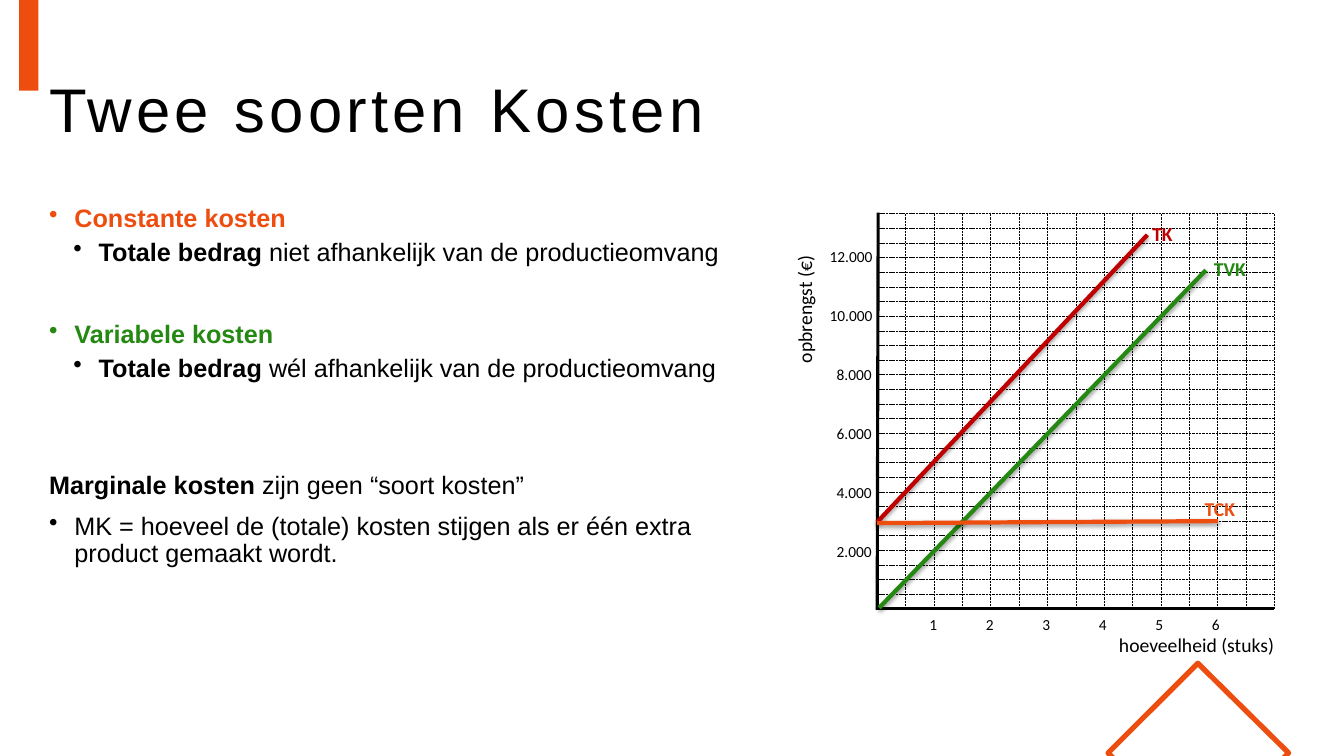
import pptx
import pptx.util
import pptx.dml.color
import pptx.enum.dml
import pptx.enum.shapes
import pptx.enum.text
import pptx.oxml
import pptx.oxml.ns

PX = 9144  # 100 px to the inch
BLACK, ORANGE, GREEN, RED = "000000", "ED4D0F", "258812", "C00000"

TITLE = "Twee soorten Kosten"
# runs (text, bold, colour), left indent, bullet, space before in points
BODY = [
    ([("Constante kosten", True, ORANGE)], 25, True, 10),
    ([("Totale bedrag", True, BLACK),
      (" niet afhankelijk van de productieomvang", False, BLACK)], 49, True, 5),
    ([("Variabele kosten", True, GREEN)], 25, True, 39),
    ([("Totale bedrag ", True, BLACK),
      ("wél afhankelijk van de productieomvang", False, BLACK)], 49, True, 5),
    ([("Marginale kosten ", True, BLACK),
      ("zijn geen “soort kosten”", False, BLACK)], 0, False, 64),
    ([("MK = hoeveel de (totale) kosten stijgen als er één extra product "
       "gemaakt wordt.", False, BLACK)], 25, True, 10),
]
COSTS = [  # name, label box, line from, line to, colour
    ("TK", (1133, 215, 41, 34), (1138, 233), (870, 518), RED),
    ("TVK", (1194, 250, 52, 34), (1196, 268), (872, 603), GREEN),
    ("TCK", (1185, 488, 50, 34), (1208, 517), (870, 519), ORANGE),
]
AXES = [((870, 604), (1264, 604)), ((871, 211), (870, 605))]
AMOUNTS = ["2.000", "4.000", "6.000", "8.000", "10.000", "12.000"]
COUNTS = ["1", "2", "3", "4", "5", "6"]
LEFT, RIGHT, TOP, BASE = 870, 1264, 212, 604
ROWS, COLS = 27, 14
DIAMOND = [(1269, 756), (1108, 756), (1099, 747), (1188, 658), (1278, 747)]

SHADOW = ('<a:outerShdw blurRad="39370" dist="20320" dir="5400000" rotWithShape="0">'
          '<a:srgbClr val="000000"><a:alpha val="38000"/></a:srgbClr></a:outerShdw>')


def emu(*vals):
    return [round(v * PX) for v in vals]


def hue(code):
    return pptx.dml.color.RGBColor.from_string(code)


def style(obj, **vals):
    for key, val in vals.items():
        setattr(obj, key, val)


def write(par, text, size, face, code, bold=False):
    run = par.add_run()
    run.text = text
    style(run.font, size=pptx.util.Pt(size), name=face, bold=bold)
    run.font.color.rgb = hue(code)
    return run


def label(text, box, size=11, code=BLACK, bold=False, turn=0):
    shape = slide.shapes.add_textbox(*emu(*box))
    shape.rotation = turn
    style(shape.text_frame, word_wrap=False,
          auto_size=pptx.enum.text.MSO_AUTO_SIZE.SHAPE_TO_FIT_TEXT)
    write(shape.text_frame.paragraphs[0], text, size, "Calibri", code, bold)


def rule(start, end, code=BLACK, width=0.25, dash=None, effect=""):
    line = slide.shapes.add_connector(
        pptx.enum.shapes.MSO_CONNECTOR.STRAIGHT, *emu(*start, *end))
    line.line.color.rgb = hue(code)
    style(line.line, width=pptx.util.Pt(width), dash_style=dash)
    xml = f'<a:effectLst {pptx.oxml.ns.nsdecls("a")}>{effect}</a:effectLst>'
    line._element.spPr.append(pptx.oxml.parse_xml(xml))


def indent(par, left):
    """Hang a bullet 25 px before the text."""
    props = par._p.get_or_add_pPr()
    props.set("marL", str(left * PX))
    props.set("indent", str(-25 * PX))
    xml = f'<a:buChar {pptx.oxml.ns.nsdecls("a")} char="•"/>'
    props.append(pptx.oxml.parse_xml(xml))


deck = pptx.Presentation()
style(deck, slide_width=1333 * PX, slide_height=750 * PX)
slide = deck.slides.add_slide(deck.slide_layouts[5])

# Decoration
bar = slide.shapes.add_shape(
    pptx.enum.shapes.MSO_SHAPE.RECTANGLE, *emu(19, -25, 19, 115))
bar.shadow.inherit = False
bar.fill.solid()
bar.fill.fore_color.rgb = hue(ORANGE)
bar.line.fill.background()

pen = slide.shapes.build_freeform(*DIAMOND[0], scale=PX)
pen.add_line_segments(DIAMOND[1:], close=True)
diamond = pen.convert_to_shape()
diamond.shadow.inherit = False
diamond.fill.background()
diamond.line.color.rgb = hue(ORANGE)
diamond.line.width = pptx.util.Pt(3.75)

# Title and body
title = slide.shapes.title
style(title, **dict(zip(("left", "top", "width", "height"), emu(39, 39, 1261, 145))))
style(title.text_frame, word_wrap=True,
      vertical_anchor=pptx.enum.text.MSO_ANCHOR.MIDDLE)
head = title.text_frame.paragraphs[0]
style(head, alignment=pptx.enum.text.PP_ALIGN.LEFT, line_spacing=0.9)
write(head, TITLE, 44, "Arial", BLACK).font._element.set("spc", "300")

body = slide.shapes.add_textbox(*emu(39, 199, 693, 512)).text_frame
body.word_wrap = True
for i, (runs, left, bullet, gap) in enumerate(BODY):
    par = body.add_paragraph() if i else body.paragraphs[0]
    style(par, line_spacing=0.9, space_before=pptx.util.Pt(gap))
    if bullet:
        indent(par, left)
    for text, bold, code in runs:
        write(par, text, 18, "Arial", code, bold)

# Grid
DASH = pptx.enum.dml.MSO_LINE.SQUARE_DOT
for i in range(ROWS + 1):
    y = TOP + i * (BASE - TOP) / ROWS
    rule((LEFT, y), (RIGHT, y), dash=DASH)
for i in range(1, COLS + 1):
    x = LEFT + i * (RIGHT - LEFT) / COLS
    rule((x, TOP), (x, BASE), dash=DASH)

# Axis labels
for i, text in enumerate(AMOUNTS):
    wide = 63 if len(text) > 5 else 56
    label(text, (876 - wide, 533 - 58.6 * i, wide, 29))
for i, text in enumerate(COUNTS):
    label(text, (912 + 56 * i, 605, 28, 29))
label("hoeveelheid (stuks)", (1100, 623, 176, 34), 14)
label("opbrengst (€)", (734, 289, 128, 34), 14, turn=270)

# Axes and cost lines
for start, end in AXES:
    rule(start, end, width=2.25)
for name, box, start, end, code in COSTS:
    rule(start, end, code, 3, effect=SHADOW)
    label(name, box, 14, code, True)

deck.save("out.pptx")
